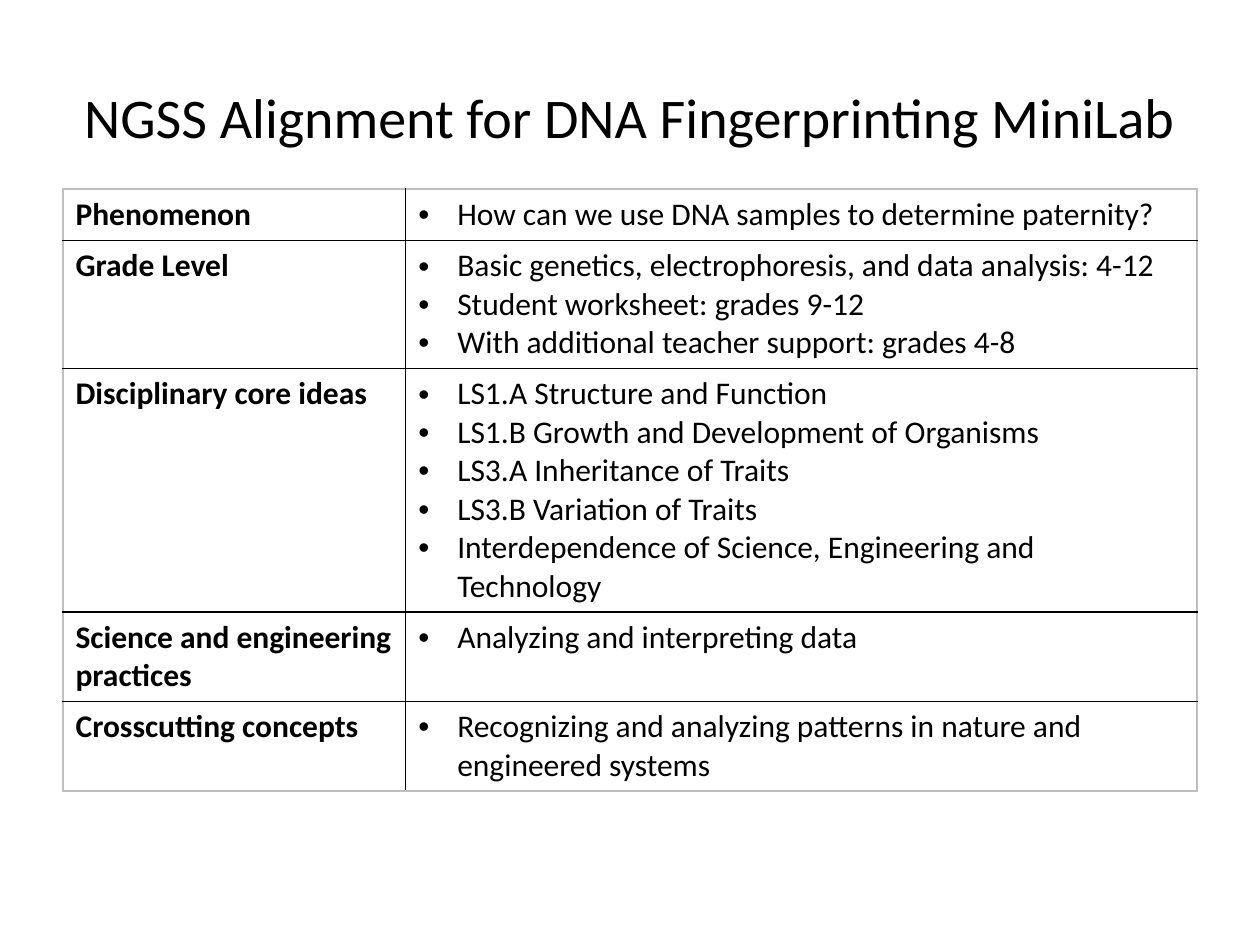
from dataclasses import dataclass

from pptx import Presentation
from pptx import util as u
from pptx.dml.color import RGBColor
from pptx.enum import text
from pptx.oxml.ns import qn
from lxml import etree


@dataclass(frozen=True)
class Theme:
    font: str = "Calibri"
    ink: str = "000000"
    paper: str = "FFFFFF"
    frame: str = "BFBFBF"
    title_size: int = 32
    body_size: int = 18
    border: int = 1
    indent: float = 0.31


class Deck:
    def __init__(self, theme):
        self.theme = theme
        self.prs = Presentation()
        self.prs.slide_width, self.prs.slide_height = u.Inches(10), u.Inches(7.5)
        self.s = None

    def slide(self):
        self.s = self.prs.slides.add_slide(self.prs.slide_layouts[5])
        fill = self.s.background.fill
        fill.solid()
        fill.fore_color.rgb = RGBColor.from_string(self.theme.paper)

    def run(self, p, words, size, bold=False):
        r = p.add_run()
        r.text = words
        r.font.name, r.font.size, r.font.bold = self.theme.font, u.Pt(size), bold
        r.font.color.rgb = RGBColor.from_string(self.theme.ink)

    def title(self, words, x, y, w, h):
        sp = self.s.shapes.title
        sp.left, sp.top, sp.width, sp.height = map(u.Inches, (x, y, w, h))
        tf = sp.text_frame
        tf.word_wrap = True
        tf.vertical_anchor = text.MSO_ANCHOR.MIDDLE
        p = tf.paragraphs[0]
        p.alignment = text.PP_ALIGN.CENTER
        self.run(p, words, self.theme.title_size)

    def bullet(self, p):
        pPr = p._p.get_or_add_pPr()
        indent = u.Inches(self.theme.indent)
        pPr.set("marL", str(indent))
        pPr.set("indent", str(-indent))
        etree.SubElement(pPr, qn("a:buFont"), typeface="Arial")
        etree.SubElement(pPr, qn("a:buChar"), char="•")

    def borders(self, cell, outer):
        tcPr = cell._tc.get_or_add_tcPr()
        for side in "LRTB":
            ln = etree.SubElement(tcPr, qn(f"a:ln{side}"), w=str(u.Pt(self.theme.border)))
            fill = etree.SubElement(ln, qn("a:solidFill"))
            color = self.theme.frame if side in outer else self.theme.ink
            etree.SubElement(fill, qn("a:srgbClr"), val=color)

    def cell(self, cell, lines, outer, heading):
        self.borders(cell, outer)
        cell.fill.background()
        tf = cell.text_frame
        for i, line in enumerate(lines):
            p = tf.add_paragraph() if i else tf.paragraphs[0]
            if not heading:
                self.bullet(p)
            self.run(p, line, self.theme.body_size, heading)

    def table(self, rows, x, y, widths, row_height):
        frame = self.s.shapes.add_table(
            len(rows), len(widths), u.Inches(x), u.Inches(y),
            u.Inches(sum(widths)), u.Inches(row_height * len(rows)))
        table = frame.table
        table.first_row = table.horz_banding = False
        for column, width in zip(table.columns, widths):
            column.width = u.Inches(width)
        for i, (heading, items) in enumerate(rows):
            table.rows[i].height = u.Inches(row_height)
            edge = ("T" if i == 0 else "") + ("B" if i == len(rows) - 1 else "")
            self.cell(table.cell(i, 0), [heading], edge + "L", True)
            self.cell(table.cell(i, 1), items, edge + "R", False)


ALIGNMENT = [
    ("Phenomenon", ["How can we use DNA samples to determine paternity?"]),
    ("Grade Level", [
        "Basic genetics, electrophoresis, and data analysis: 4-12",
        "Student worksheet: grades 9-12",
        "With additional teacher support: grades 4-8",
    ]),
    ("Disciplinary core ideas", [
        "LS1.A Structure and Function",
        "LS1.B Growth and Development of Organisms",
        "LS3.A Inheritance of Traits",
        "LS3.B Variation of Traits",
        "Interdependence of Science, Engineering and Technology",
    ]),
    ("Science and engineering practices", ["Analyzing and interpreting data"]),
    ("Crosscutting concepts", [
        "Recognizing and analyzing patterns in nature and engineered systems",
    ]),
]


def main():
    deck = Deck(Theme())
    deck.slide()
    # Title
    deck.title("NGSS Alignment for DNA Fingerprinting MiniLab", 0.5, 0.3, 9, 1.25)
    # Standards table: rows grow with their text
    deck.table(ALIGNMENT, 0.5, 1.5, [2.72, 6.28], 0.41)
    deck.prs.save("out.pptx")


if __name__ == "__main__":
    main()
